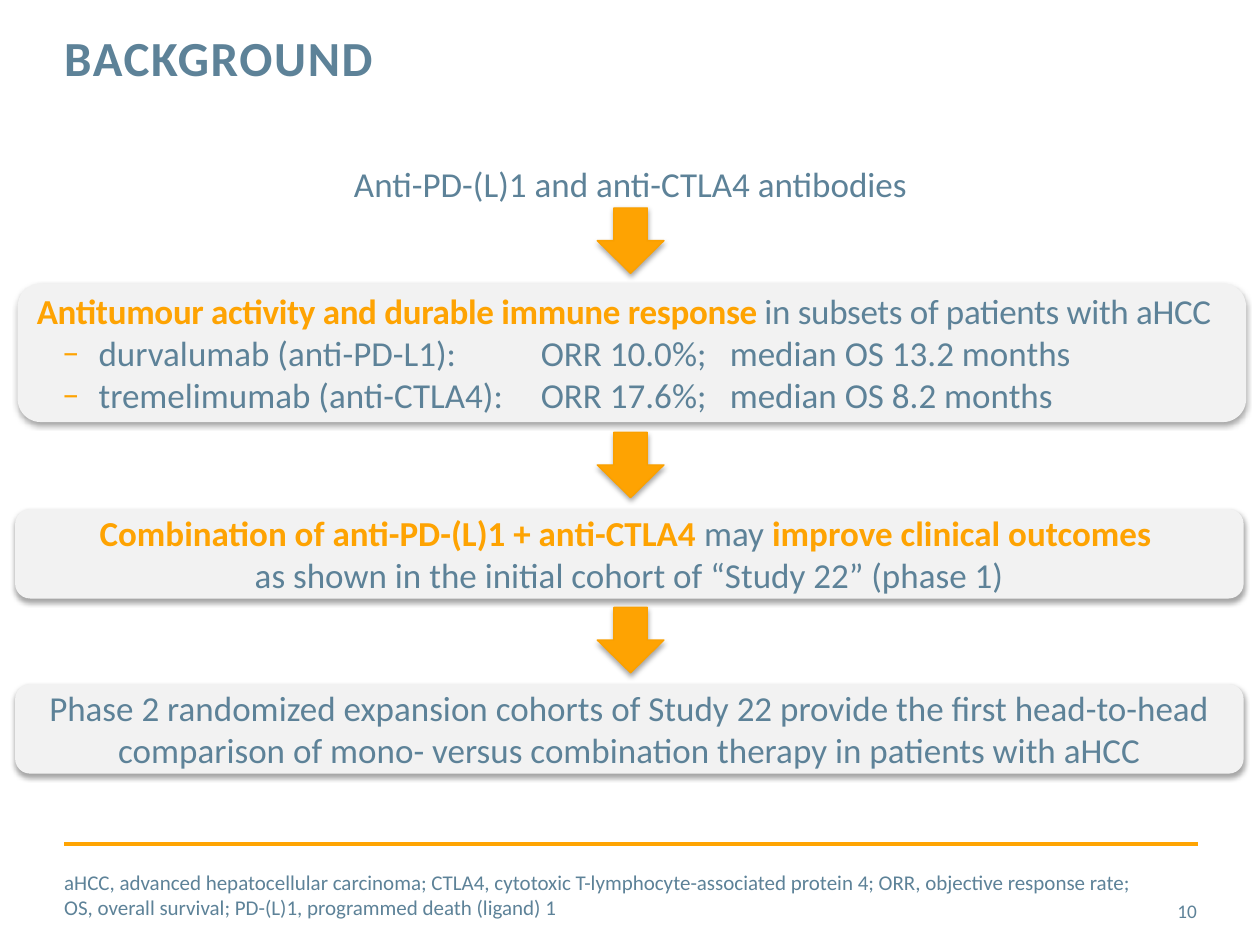
from lxml import etree
from pptx import Presentation
from pptx.dml.color import RGBColor
from pptx.enum.shapes import MSO_CONNECTOR, MSO_SHAPE
from pptx.enum.text import MSO_ANCHOR as Anchor, PP_ALIGN as Align
from pptx.oxml.ns import qn
from pptx.util import Inches, Pt

SLATE = RGBColor(0x5D, 0x82, 0x98)
ORANGE = RGBColor(0xFE, 0xA3, 0x02)
ARROW_EDGE = RGBColor(0xFA, 0xA0, 0x00)
RULE = RGBColor(0xFF, 0xA4, 0x02)
PANEL = RGBColor(0xF2, 0xF2, 0xF2)

PLAIN = {"name": "Calibri", "size": Pt(20), "bold": False}
STRONG = {**PLAIN, "bold": True}
SMALL = {**PLAIN, "size": Pt(12)}
PAGE = {**PLAIN, "size": Pt(11)}
HEADING = {**STRONG, "size": Pt(28)}

MARGIN, RIGHT = 0.51, 9.51
PANEL_WIDTH = 9.75
ARROW_LEFT = 4.74
TAB_STOPS = (3.5, 4, 5.5)


def add_child(parent, tag, **attributes):
    values = {key: str(value) for key, value in attributes.items()}
    return etree.SubElement(parent, qn(tag), values)


def add_soft_shadow(shape):
    shape.shadow.inherit = False
    effects = shape._element.spPr.find(qn("a:effectLst"))
    shadow = add_child(effects, "a:outerShdw", blurRad=Pt(3.1), dist=Pt(1.8),
                       dir=90 * 60000, rotWithShape=0)
    black = add_child(shadow, "a:srgbClr", val="000000")
    add_child(black, "a:alpha", val=35000)


def add_dash(paragraph):
    """Give a paragraph an orange dash, a hanging indent and tab stops."""
    props = paragraph._p.get_or_add_pPr()
    props.set("marL", str(Inches(0.49)))
    props.set("indent", str(Inches(-0.29)))
    bullet_color = add_child(props, "a:buClr")
    add_child(bullet_color, "a:srgbClr", val=ORANGE)
    add_child(props, "a:buFont", typeface="Calibri")
    add_child(props, "a:buChar", char="–")
    tabs = add_child(props, "a:tabLst")
    for stop in TAB_STOPS:
        add_child(tabs, "a:tab", pos=Inches(stop), algn="l")


def write(paragraph, text, style=PLAIN, color=SLATE, spacing=0):
    """Add text to a paragraph; each newline becomes a line break."""
    for index, line in enumerate(text.split("\n")):
        if index:
            paragraph.add_line_break()
        if not line:
            continue
        run = paragraph.add_run()
        run.text = line
        for key, value in style.items():
            setattr(run.font, key, value)
        run.font.color.rgb = color
        if spacing:
            run._r.get_or_add_rPr().set("spc", str(round(spacing * 100)))


def add_label(slide, box, text, style, align=Align.LEFT, anchor=Anchor.TOP, spacing=0):
    frame = slide.shapes.add_textbox(*map(Inches, box)).text_frame
    frame.word_wrap = True
    frame.vertical_anchor = anchor
    for side in ("left", "top", "right", "bottom"):
        setattr(frame, f"margin_{side}", 0)
    paragraph = frame.paragraphs[0]
    paragraph.alignment = align
    write(paragraph, text, style, spacing=spacing)
    return paragraph


def add_panel(slide, box, align=Align.CENTER):
    panel = slide.shapes.add_shape(MSO_SHAPE.ROUNDED_RECTANGLE, *map(Inches, box))
    panel.fill.solid()
    panel.fill.fore_color.rgb = PANEL
    panel.line.fill.background()
    add_soft_shadow(panel)
    frame = panel.text_frame
    frame.word_wrap = True
    frame.vertical_anchor = Anchor.MIDDLE
    frame.paragraphs[0].alignment = align
    return frame


def add_arrow(slide, top):
    arrow = slide.shapes.add_shape(MSO_SHAPE.DOWN_ARROW, Inches(ARROW_LEFT),
                                   Inches(top), Inches(0.53), Inches(0.52))
    arrow.fill.solid()
    arrow.fill.fore_color.rgb = ORANGE
    arrow.line.color.rgb = ARROW_EDGE
    arrow.line.width = Pt(0.75)
    add_soft_shadow(arrow)


def add_response_panel(slide, box):
    frame = add_panel(slide, box, Align.LEFT)
    lead = frame.paragraphs[0]
    write(lead, "Antitumour activity and durable immune response ", STRONG, ORANGE, -0.2)
    write(lead, "in subsets of patients with aHCC", spacing=-0.2)
    for result in ("durvalumab (anti-PD-L1):\t\tORR 10.0%; \tmedian OS 13.2 months",
                   "tremelimumab (anti-CTLA4):\tORR 17.6%; \tmedian OS 8.2 months"):
        paragraph = frame.add_paragraph()
        paragraph.alignment = Align.LEFT
        paragraph.level = 1
        add_dash(paragraph)
        write(paragraph, result)


def add_combination_panel(slide, box):
    paragraph = add_panel(slide, box).paragraphs[0]
    write(paragraph, "Combination of anti-PD-(L)1 + anti-CTLA4 ", STRONG, ORANGE)
    write(paragraph, "may ")
    write(paragraph, "improve clinical outcomes \n", STRONG, ORANGE)
    write(paragraph, "as shown in the initial cohort of “Study 22” (phase 1)")


def add_expansion_panel(slide, box):
    write(add_panel(slide, box).paragraphs[0],
          "Phase 2 randomized expansion cohorts of Study 22 provide the first "
          "head-to-head comparison of mono- versus combination therapy in "
          "patients with aHCC")


def add_footer(slide, left, top, right):
    rule = slide.shapes.add_connector(MSO_CONNECTOR.STRAIGHT, Inches(left),
                                      Inches(top), Inches(right), Inches(top))
    rule.line.color.rgb = RULE
    rule.line.width = Pt(2)
    add_child(rule._element.spPr, "a:effectLst")
    add_label(slide, (left, top + 0.2, 8.67, 0.4),
              "aHCC, advanced hepatocellular carcinoma; CTLA4, cytotoxic "
              "T-lymphocyte-associated protein 4; ORR, objective response rate; \n"
              "OS, overall survival; PD-(L)1, programmed death (ligand) 1",
              SMALL, anchor=Anchor.MIDDLE)
    add_label(slide, (right - 0.65, top + 0.33, 0.64, 0.4), "10", PAGE,
              Align.RIGHT, Anchor.MIDDLE)


def main():
    deck = Presentation()
    deck.slide_width, deck.slide_height = Inches(10), Inches(7.5)
    slide = deck.slides.add_slide(deck.slide_layouts[6])

    # Title and opening line
    title = add_label(slide, (MARGIN, 0.27, 7.17, 0.88), "BACKGROUND", HEADING, spacing=1)
    title.line_spacing = Pt(30)
    add_label(slide, (MARGIN, 1.29, 8.99, 0.38),
              "Anti-PD-(L)1 and anti-CTLA4 antibodies", PLAIN, Align.CENTER)

    # Chain of evidence
    add_response_panel(slide, (0.14, 2.25, PANEL_WIDTH, 1.1))
    add_combination_panel(slide, (0.12, 4.04, PANEL_WIDTH, 0.71))
    add_expansion_panel(slide, (0.12, 5.43, PANEL_WIDTH, 0.71))
    for top in (1.65, 3.43, 4.82):
        add_arrow(slide, top)

    # Rule, abbreviations and page number
    add_footer(slide, MARGIN, 6.7, RIGHT)
    deck.save("out.pptx")


if __name__ == "__main__":
    main()
